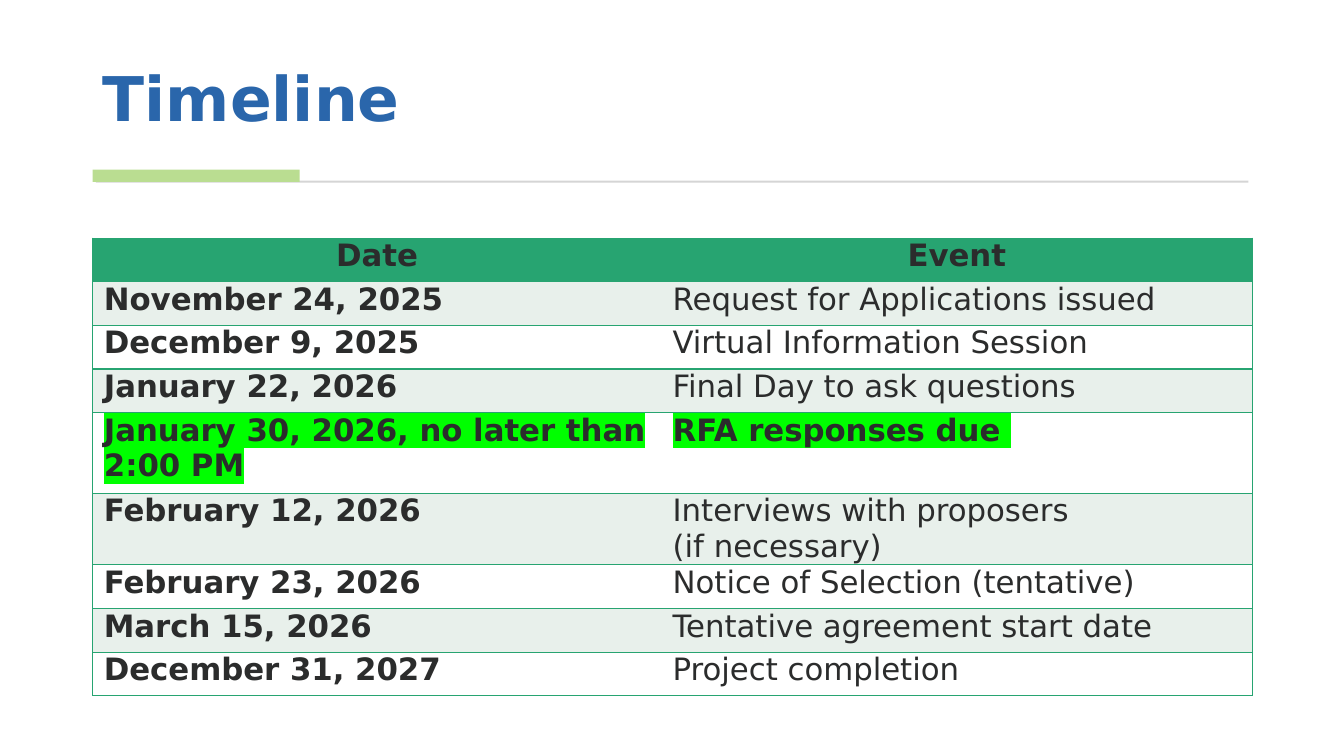
import pptx
import pptx.util
import pptx.dml.color
import pptx.enum.shapes
import pptx.enum.text
import pptx.oxml
import pptx.oxml.ns
import lxml.etree

COLORS = {"title": "2A66AB", "ink": "2B2C2C", "green": "27A471", "band": "E8F0EB",
          "white": "FFFFFF", "rule": "D5D5D5", "accent": "BADD91", "due": "00FF00"}
FONT = "DejaVu Sans"
NO_STYLE = "{2D5ABB26-0587-4C30-8999-92F81FD0307C}"
ALIGN = pptx.enum.text.PP_ALIGN
LEFT = 6.9  # left edge of the content, in grid columns

MILESTONES = [
    ("November 24, 2025", "Request for Applications issued"),
    ("December 9, 2025", "Virtual Information Session"),
    ("January 22, 2026", "Final Day to ask questions"),
    ("January 30, 2026, no later than 2:00 PM", "RFA responses due "),
    ("February 12, 2026", "Interviews with proposers\n(if necessary)"),
    ("February 23, 2026", "Notice of Selection (tentative)"),
    ("March 15, 2026", "Tentative agreement start date"),
    ("December 31, 2027", "Project completion"),
]
DEADLINE = 4  # table row of the highlighted milestone


def rgb(name):
    return pptx.dml.color.RGBColor.from_string(COLORS[name])


def add_child(parent, tag, **attributes):
    return lxml.etree.SubElement(parent, pptx.oxml.ns.qn(tag), attributes)


def write(frame, text, size=22, color="ink", bold=False, align=ALIGN.LEFT,
          spacing=None, highlight=None):
    """Fill a text frame, one paragraph per line of text."""
    for number, line in enumerate(text.split("\n")):
        paragraph = frame.add_paragraph() if number else frame.paragraphs[0]
        paragraph.alignment = align
        paragraph.line_spacing = spacing
        run = paragraph.add_run()
        run.text = line
        run.font.size = pptx.util.Pt(size)
        run.font.bold = bold
        run.font.color.rgb = rgb(color)
        if highlight:
            mark = add_child(run.font._element, "a:highlight")
            add_child(mark, "a:srgbClr", val=COLORS[highlight])
        run.font.name = FONT


class Deck:
    """Slide on a grid of 100 columns by 100 rows."""

    def __init__(self, width, height):
        self.file = pptx.Presentation()
        self.file.slide_width = pptx.util.Inches(width)
        self.file.slide_height = pptx.util.Inches(height)
        self.slide = self.file.slides.add_slide(self.file.slide_layouts[5])

    def x(self, columns):
        return round(self.file.slide_width * columns / 100)

    def y(self, rows):
        return round(self.file.slide_height * rows / 100)

    def box(self, left, top, width, height):
        return self.x(left), self.y(top), self.x(width), self.y(height)

    def title(self, text, *place):
        heading = self.slide.shapes.title
        heading.left, heading.top, heading.width, heading.height = self.box(*place)
        heading.text_frame.vertical_anchor = pptx.enum.text.MSO_ANCHOR.BOTTOM
        heading.text_frame.auto_size = pptx.enum.text.MSO_AUTO_SIZE.NONE
        write(heading.text_frame, text, size=44, color="title", bold=True, spacing=0.9)

    def bar(self, color, *place):
        bar = self.slide.shapes.add_shape(
            pptx.enum.shapes.MSO_SHAPE.RECTANGLE, *self.box(*place))
        bar.shadow.inherit = False
        bar.fill.solid()
        bar.fill.fore_color.rgb = rgb(color)
        bar.line.fill.background()

    def border(self, cell, sides):
        properties = cell._tc.get_or_add_tcPr()
        for position, side in enumerate(sides):
            line = pptx.oxml.parse_xml(
                f'<a:ln{side} {pptx.oxml.ns.nsdecls("a")} w="12700"><a:solidFill>'
                f'<a:srgbClr val="{COLORS["green"]}"/></a:solidFill></a:ln{side}>')
            properties.insert(position, line)

    def cell(self, cell, text, fill, sides, **style):
        cell.margin_left = cell.margin_right = self.x(0.83)
        cell.margin_top = cell.margin_bottom = 0
        cell.fill.solid()
        cell.fill.fore_color.rgb = rgb(fill)
        self.border(cell, sides)
        write(cell.text_frame, text, **style)

    def schedule(self, left, top, widths, heights, header, entries):
        frame = self.slide.shapes.add_table(
            len(heights), len(widths),
            *self.box(left, top, sum(widths), sum(heights)))
        table = frame.table
        table.first_row = table.horz_banding = False
        table._tbl.tblPr.find(pptx.oxml.ns.qn("a:tableStyleId")).text = NO_STYLE
        for column, width in zip(table.columns, widths):
            column.width = self.x(width)
        for row, height in zip(table.rows, heights):
            row.height = self.y(height)
        for r, entry in enumerate([header] + entries):
            fill = "green" if r == 0 else ("band" if r % 2 else "white")
            for c, text in enumerate(entry):
                self.cell(table.cell(r, c), text, fill, "RTB" if c else "LTB",
                          bold=c == 0 or r in (0, DEADLINE),
                          align=ALIGN.LEFT if r else ALIGN.CENTER,
                          highlight="due" if r == DEADLINE else None)


def main():
    deck = Deck(13.33, 7.5)

    # Heading with its rule and accent
    deck.title("Timeline", LEFT, 3.73, 86.2, 14.8)
    deck.bar("rule", 7.13, 23.9, 85.75, 0.27)
    deck.bar("accent", LEFT, 22.45, 15.4, 1.6)

    # Schedule of dates and events
    heights = [5.77] * (len(MILESTONES) + 1)
    heights[DEADLINE] = 10.67
    deck.schedule(LEFT, 31.5, [42.32, 43.95], heights, ("Date", "Event"), MILESTONES)

    deck.file.save("out.pptx")


if __name__ == "__main__":
    main()
